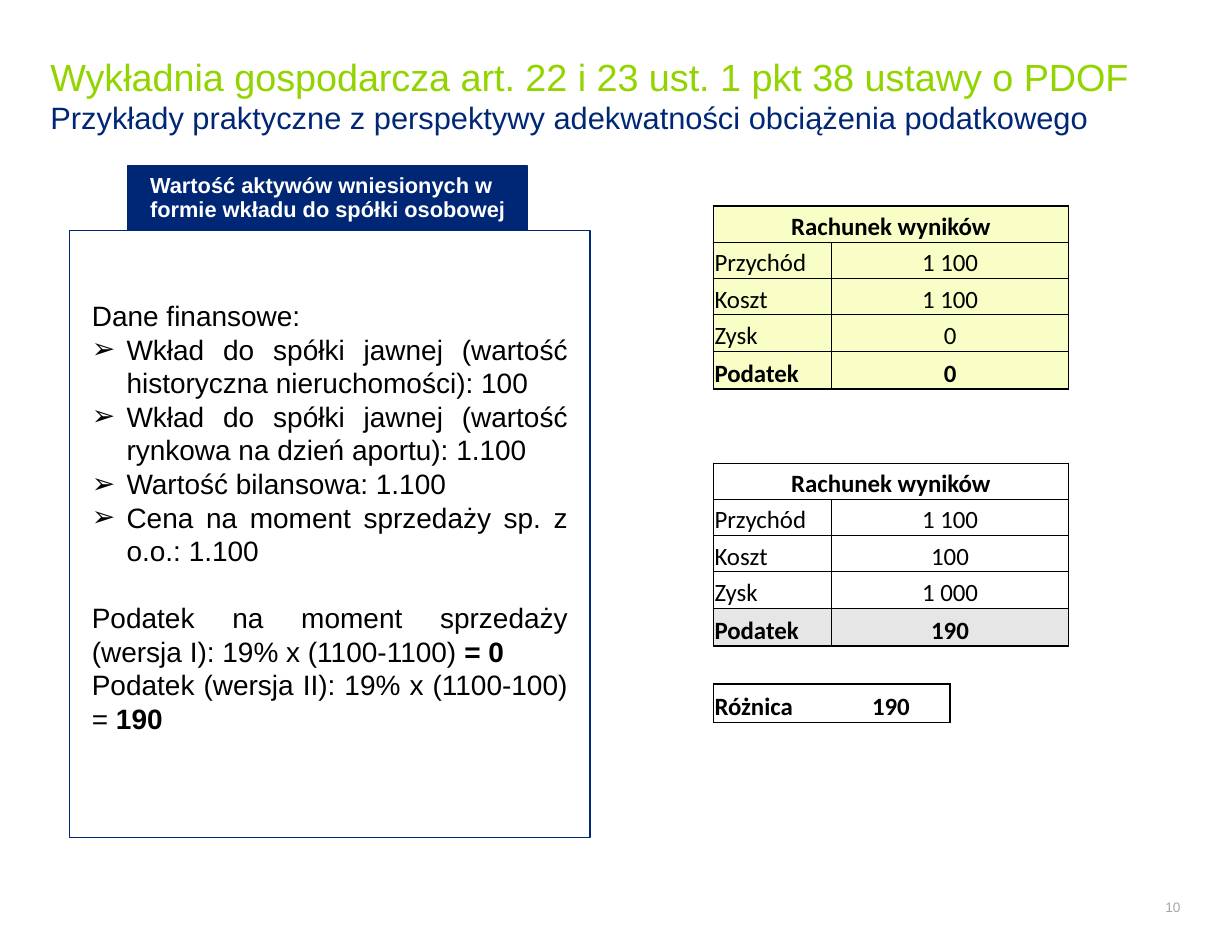
from lxml import etree
from pptx import Presentation
from pptx import util as u
from pptx.dml.color import RGBColor
from pptx.enum import shapes, text
from pptx.oxml.ns import qn

LEFT, MID, RIGHT, JUST = (text.PP_ALIGN.LEFT, text.PP_ALIGN.CENTER,
                          text.PP_ALIGN.RIGHT, text.PP_ALIGN.JUSTIFY)
GREEN, NAVY, GREY = "92D400", "002776", "A6A6A6"
BLACK, WHITE = "000000", "FFFFFF"
CREAM, SILVER = "F9FEC7", "E7E6E6"
PLAIN = "{2D5ABB26-0587-4C30-8999-92F81FD0307C}"


def color(code):
    return RGBColor.from_string(code)


class Page:
    def __init__(self, deck):
        self.slide = deck.slides.add_slide(deck.slide_layouts[6])
        self.face = "Arial"

    def font(self, run, size, code, bold=False, face=None):
        run.font.name = face or self.face
        run.font.size = u.Pt(size)
        run.font.bold = bold
        run.font.color.rgb = color(code)

    def frame(self, shape, inset):
        frame = shape.text_frame
        frame.word_wrap = True
        frame.vertical_anchor = text.MSO_ANCHOR.MIDDLE
        frame.margin_left = frame.margin_right = u.Inches(inset)
        frame.margin_top = frame.margin_bottom = u.Inches(inset)
        return frame

    def label(self, box, words, styles, align=LEFT):
        shape = self.slide.shapes.add_textbox(*map(u.Inches, box))
        frame = self.frame(shape, 0)
        para = frame.paragraphs[0]
        para.text = words
        para.alignment = align
        for run, (size, code) in zip(para.runs, styles):
            self.font(run, size, code)

    def panel(self, box, fill=None):
        shape = self.slide.shapes.add_shape(
            shapes.MSO_SHAPE.RECTANGLE, *map(u.Inches, box))
        shape.shadow.inherit = False
        if fill:
            shape.fill.solid()
            shape.fill.fore_color.rgb = color(fill)
        else:
            shape.fill.background()
        shape.line.color.rgb = color(NAVY)
        shape.line.width = u.Pt(1)
        return self.frame(shape, 0.2)

    def bullet(self, para):
        props = para._p.get_or_add_pPr()
        props.set("marL", str(u.Inches(0.31)))
        props.set("indent", str(-u.Inches(0.31)))
        etree.SubElement(props, qn("a:buFont"), typeface="Arial")
        etree.SubElement(props, qn("a:buChar"), char="➢")

    def table(self, box, rows, cols):
        shape = self.slide.shapes.add_table(rows, cols, *map(u.Inches, box))
        grid = shape.table
        grid.first_row = grid.horz_banding = False
        grid._tbl.tblPr.find(qn("a:tableStyleId")).text = PLAIN
        for cell in grid.iter_cells():
            cell.fill.background()
            cell.vertical_anchor = text.MSO_ANCHOR.BOTTOM
            cell.margin_left = cell.margin_right = u.Inches(0.01)
            cell.margin_top, cell.margin_bottom = u.Inches(0.01), 0
        return grid

    def edges(self, cell, widths):
        props = cell._tc.get_or_add_tcPr()
        lines = [(side, w) for side, w in zip("LRTB", widths) if w]
        for spot, (side, width) in enumerate(lines):
            line = etree.Element(qn("a:ln" + side), w=str(u.Pt(width)))
            fill = etree.SubElement(line, qn("a:solidFill"))
            etree.SubElement(fill, qn("a:srgbClr"), val=BLACK)
            props.insert(spot, line)

    def border(self, grid, top, end, last):
        """Thick outline, thin inner lines, no column line in the top row."""
        for row in range(top, end + 1):
            inner = 0.5 if row > top else 0
            for col in range(last + 1):
                cell = grid.cell(row, col)
                span = cell.span_width if cell.is_merge_origin else 1
                self.edges(cell, (
                    1 if col == 0 else inner if col == 1 else 0,
                    1 if col + span > last else inner if col == 0 else 0,
                    1 if row == top else 0.5,
                    1 if row == end else 0.5))

    def entry(self, cell, words, align, bold):
        cell.text = words
        para = cell.text_frame.paragraphs[0]
        para.alignment = align
        self.font(para.runs[0], 16, BLACK, bold, "Calibri")

    def result(self, grid, top, values, fills):
        names = ["Przychód", "Koszt", "Zysk", "Podatek"]
        end = top + len(names)
        grid.cell(top, 0).merge(grid.cell(top, 2))
        self.entry(grid.cell(top, 0), "Rachunek wyników", MID, True)
        for row, (name, value) in enumerate(zip(names, values), top + 1):
            grid.cell(row, 1).merge(grid.cell(row, 2))
            self.entry(grid.cell(row, 0), name, LEFT, row == end)
            self.entry(grid.cell(row, 1), value, MID, row == end)
        self.border(grid, top, end, 2)
        for row, code in enumerate(fills, top):
            for col in range(3):
                if code:
                    fill = grid.cell(row, col).fill
                    fill.solid()
                    fill.fore_color.rgb = color(code)


def main():
    deck = Presentation()
    deck.slide_width, deck.slide_height = u.Inches(11), u.Inches(8.5)
    page = Page(deck)

    # Title and page number
    page.label((0.45, 0.31, 10.09, 1.07),
               "Wykładnia gospodarcza art. 22 i 23 ust. 1 pkt 38 ustawy o PDOF\v"
               "Przykłady praktyczne z perspektywy adekwatności obciążenia "
               "podatkowego", [(24.3, GREEN), (19.8, NAVY)])
    page.label((9.59, 7.94, 0.95, 0.31), "10", [(8.8, GREY)], RIGHT)

    # Panel heading, with a narrow right margin so it fits two lines
    title = page.panel((1.14, 1.48, 3.57, 0.58), NAVY)
    title.margin_right = u.Inches(0.1)
    title.margin_top = title.margin_bottom = u.Inches(0.05)
    head = title.paragraphs[0]
    head.text = "Wartość aktywów wniesionych w formie wkładu do spółki osobowej"
    head.alignment = LEFT
    head.line_spacing, head.space_after = u.Pt(15), u.Pt(6)
    page.font(head.runs[0], 14, WHITE, True)

    # Financial data: plain text, bold ending, bulleted or not
    facts = [
        ("Dane finansowe:", "", False),
        ("Wkład do spółki jawnej (wartość historyczna nieruchomości): 100",
         "", True),
        ("Wkład do spółki jawnej (wartość rynkowa na dzień aportu): 1.100",
         "", True),
        ("Wartość bilansowa: 1.100", "", True),
        ("Cena na moment sprzedaży sp. z o.o.: 1.100", "", True),
        ("Podatek na moment sprzedaży (wersja I): 19% x (1100-1100) ",
         "= 0", False),
        ("Podatek (wersja II): 19% x (1100-100) = ", "190", False),
    ]
    body = page.panel((0.62, 2.06, 4.65, 5.42))
    body.margin_bottom = u.Inches(0.51)
    for spot, (words, strong, listed) in enumerate(facts):
        para = body.add_paragraph() if spot else body.paragraphs[0]
        para.text = words
        para.alignment = JUST
        page.font(para.runs[0], 18, BLACK)
        if strong:
            run = para.add_run()
            run.text = strong
            page.font(run, 18, BLACK, True)
        if listed:
            page.bullet(para)
    body.paragraphs[5].space_before = u.Pt(21.5)

    # Profit and loss table
    grid = page.table((6.37, 1.84, 3.17, 4.61), 14, 3)
    for col in grid.columns:
        col.width = u.Inches(3.17 / 3)
    tall = (4, 6, 11, 12, 13)
    low = (4.61 - 0.34 * len(tall)) / (14 - len(tall))
    for spot, row in enumerate(grid.rows):
        row.height = u.Inches(0.34 if spot in tall else low)
    page.result(grid, 0, ["1 100", "1 100", "0", "0"], [CREAM] * 5)
    page.result(grid, 7, ["1 100", "100", "1 000", "190"],
                [None] * 4 + [SILVER])

    # Difference row
    page.border(grid, 13, 13, 1)
    page.entry(grid.cell(13, 0), "Różnica", LEFT, True)
    page.entry(grid.cell(13, 1), "190", MID, True)

    deck.save("out.pptx")


if __name__ == "__main__":
    main()
